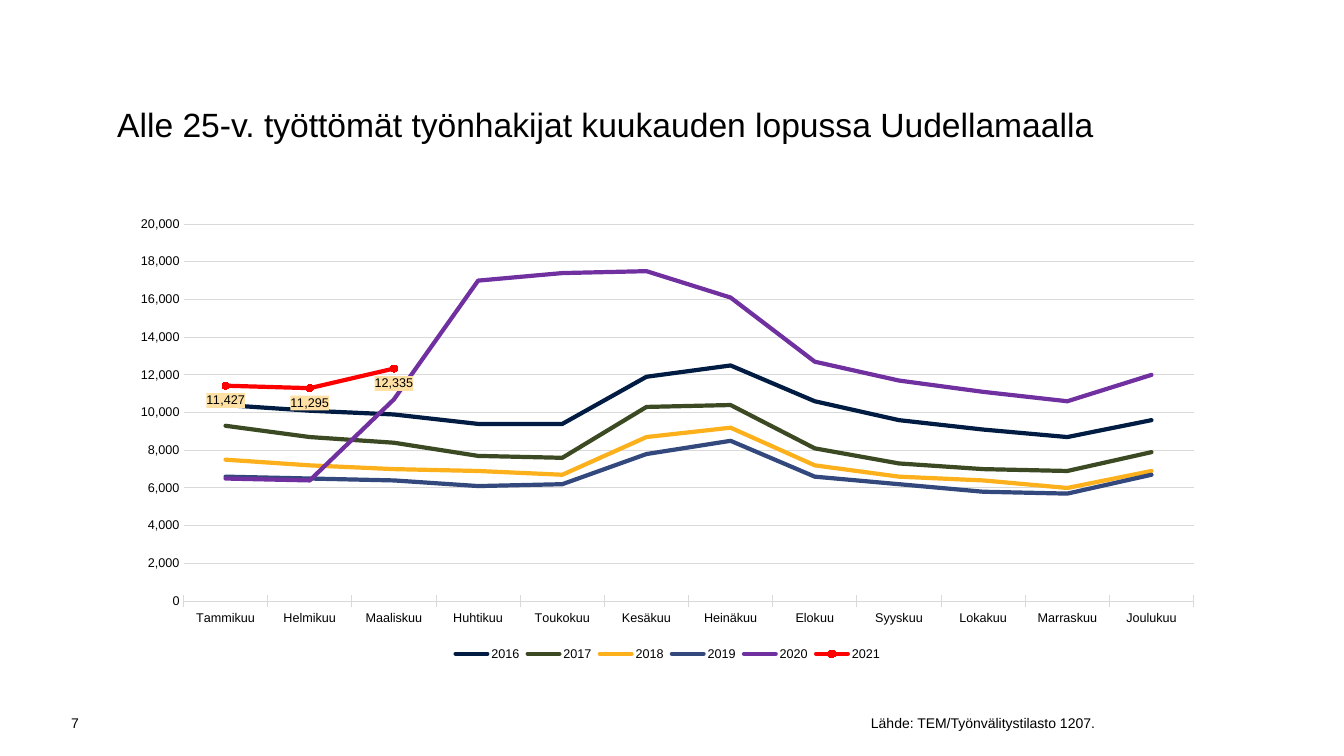
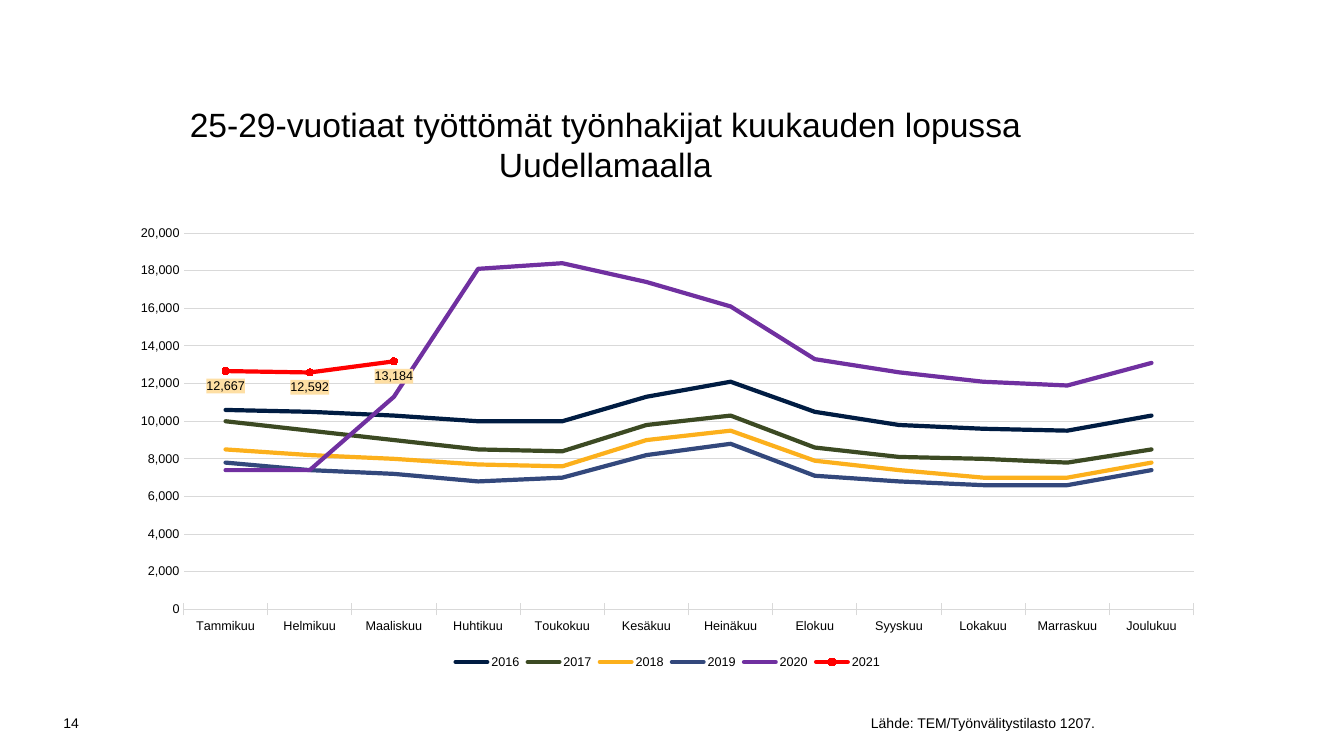
from dataclasses import dataclass
from typing import Optional

from lxml.etree import SubElement
from pptx import Presentation
from pptx.chart.axis import CategoryAxis, ValueAxis
from pptx.chart.chart import Chart
from pptx.chart.data import CategoryChartData
from pptx.chart.series import LineSeries
from pptx.dml.color import RGBColor
from pptx.dml.line import LineFormat
from pptx.enum.chart import (XL_CHART_TYPE, XL_LABEL_POSITION, XL_LEGEND_POSITION,
                             XL_MARKER_STYLE, XL_TICK_MARK)
from pptx.enum.text import MSO_ANCHOR, MSO_AUTO_SIZE, PP_ALIGN
from pptx.oxml import parse_xml
from pptx.oxml.ns import nsdecls, qn
from pptx.slide import Slide
from pptx.text.text import Font, TextFrame
from pptx.util import Pt


@dataclass(frozen=True)
class Theme:
    """Colours, typeface and type sizes of the deck."""
    font: str = "Arial"
    ink: str = "000000"
    grid: str = "D9D9D9"
    label_fill: str = "FEDFA4"
    highlight: str = "FF0000"
    title_size: float = 24
    footer_size: float = 10
    chart_size: float = 9
    grid_width: float = 0.75
    series_width: float = 3
    marker_size: int = 5


@dataclass(frozen=True)
class Box:
    """A rectangle in points."""
    left: float
    top: float
    width: float
    height: float


@dataclass(frozen=True)
class YearStyle:
    """Name and line colour of one year."""
    name: str
    color: str


@dataclass(frozen=True)
class ChartPage:
    """Content of one slide."""
    title: str
    number: str
    chart_box: Box
    values: tuple[tuple[int, ...], ...]


THEME = Theme()
TITLE_BOX = Box(74.9, 70.6, 715, 63.4)
SOURCE_BOX = Box(85.7, 501.8, 703.4, 28.8)
NUMBER_BOX = Box(21.6, 502.5, 41.8, 28.1)
SOURCE = "Lähde: TEM/Työnvälitystilasto 1207."
NUMBER_FORMAT = "#,##0"
PLOT_AREA = {"x": 0.058, "y": 0.036, "w": 0.922, "h": 0.824}
MONTHS = ("Tammikuu", "Helmikuu", "Maaliskuu", "Huhtikuu", "Toukokuu", "Kesäkuu",
          "Heinäkuu", "Elokuu", "Syyskuu", "Lokakuu", "Marraskuu", "Joulukuu")
YEARS = (
    YearStyle("2016", "001C42"),
    YearStyle("2017", "3C4A23"),
    YearStyle("2018", "FCB01C"),
    YearStyle("2019", "33487C"),
    YearStyle("2020", "7030A0"),
    YearStyle("2021", THEME.highlight),
)
PAGES = (
    ChartPage(
        "Alle 25-v. työttömät työnhakijat kuukauden lopussa Uudellamaalla", "7",
        Box(85.7, 148.3, 782.6, 326.9),
        (
            (10400, 10100, 9900, 9400, 9400, 11900, 12500, 10600, 9600, 9100, 8700, 9600),
            (9300, 8700, 8400, 7700, 7600, 10300, 10400, 8100, 7300, 7000, 6900, 7900),
            (7500, 7200, 7000, 6900, 6700, 8700, 9200, 7200, 6600, 6400, 6000, 6900),
            (6600, 6500, 6400, 6100, 6200, 7800, 8500, 6600, 6200, 5800, 5700, 6700),
            (6500, 6400, 10700, 17000, 17400, 17500, 16100, 12700, 11700, 11100, 10600, 12000),
            (11427, 11295, 12335),
        ),
    ),
    ChartPage(
        "25-29-vuotiaat työttömät työnhakijat kuukauden lopussa Uudellamaalla", "14",
        Box(85.7, 154.8, 782.6, 326.2),
        (
            (10600, 10500, 10300, 10000, 10000, 11300, 12100, 10500, 9800, 9600, 9500, 10300),
            (10000, 9500, 9000, 8500, 8400, 9800, 10300, 8600, 8100, 8000, 7800, 8500),
            (8500, 8200, 8000, 7700, 7600, 9000, 9500, 7900, 7400, 7000, 7000, 7800),
            (7800, 7400, 7200, 6800, 7000, 8200, 8800, 7100, 6800, 6600, 6600, 7400),
            (7400, 7400, 11300, 18100, 18400, 17400, 16100, 13300, 12600, 12100, 11900, 13100),
            (12667, 12592, 13184),
        ),
    ),
)


def bounds(box: Box) -> tuple[Pt, Pt, Pt, Pt]:
    """Give the box as python-pptx lengths."""
    return Pt(box.left), Pt(box.top), Pt(box.width), Pt(box.height)


def style_font(font: Font, size: float) -> None:
    """Apply the deck typeface and text colour."""
    font.name = THEME.font
    font.size = Pt(size)
    font.color.rgb = RGBColor.from_string(THEME.ink)


def style_line(line: LineFormat, color: str, width: float) -> None:
    """Make a line solid with a colour and width."""
    line.color.rgb = RGBColor.from_string(color)
    line.width = Pt(width)


def write_text(frame: TextFrame, text: str, size: float, align: PP_ALIGN,
               anchor: MSO_ANCHOR) -> None:
    """Write one formatted paragraph into a frame."""
    frame.word_wrap = True
    frame.auto_size = MSO_AUTO_SIZE.NONE
    frame.vertical_anchor = anchor
    para = frame.paragraphs[0]
    para.alignment = align
    span = para.add_run()
    span.text = text
    style_font(span.font, size)


def add_title(page: Slide, text: str) -> None:
    """Place and fill the title placeholder."""
    title = page.shapes.title
    title.left, title.top, title.width, title.height = bounds(TITLE_BOX)
    write_text(title.text_frame, text, THEME.title_size, PP_ALIGN.CENTER, MSO_ANCHOR.TOP)


def add_footer(page: Slide, box: Box, text: str) -> None:
    """Add a right-aligned footer text."""
    frame = page.shapes.add_textbox(*bounds(box)).text_frame
    write_text(frame, text, THEME.footer_size, PP_ALIGN.RIGHT, MSO_ANCHOR.MIDDLE)


def fix_plot_area(chart: Chart) -> None:
    """Set the inner plot area as fractions of the chart."""
    plot_area = chart.plots[0]._element.getparent()
    for old_layout in plot_area.findall(qn("c:layout")):
        plot_area.remove(old_layout)
    layout = parse_xml(f"<c:layout {nsdecls('c')}><c:manualLayout/></c:layout>")
    settings = {"layoutTarget": "inner", "xMode": "edge", "yMode": "edge", **PLOT_AREA}
    for name, value in settings.items():
        SubElement(layout[0], qn(f"c:{name}")).set("val", str(value))
    plot_area.insert(0, layout)


def style_category_axis(axis: CategoryAxis) -> None:
    """Format the month axis."""
    axis.major_tick_mark = XL_TICK_MARK.CROSS
    axis.minor_tick_mark = XL_TICK_MARK.NONE
    style_line(axis.format.line, THEME.grid, THEME.grid_width)
    style_font(axis.tick_labels.font, THEME.chart_size)


def style_value_axis(axis: ValueAxis) -> None:
    """Format the value axis and its gridlines."""
    axis.minimum_scale, axis.maximum_scale, axis.major_unit = 0, 20000, 2000
    axis.major_tick_mark = axis.minor_tick_mark = XL_TICK_MARK.NONE
    axis.format.line.fill.background()
    style_line(axis.major_gridlines.format.line, THEME.grid, THEME.grid_width)
    style_font(axis.tick_labels.font, THEME.chart_size)
    axis.tick_labels.number_format = NUMBER_FORMAT
    axis.tick_labels.number_format_is_linked = False


def highlight_series(series: LineSeries) -> None:
    """Give a series round markers and tinted value labels."""
    marker = series.marker
    marker.style = XL_MARKER_STYLE.CIRCLE
    marker.size = THEME.marker_size
    color = RGBColor.from_string(THEME.highlight)
    marker.format.fill.solid()
    marker.format.fill.fore_color.rgb = color
    marker.format.line.color.rgb = color
    labels = series.data_labels
    labels.show_value = True
    labels.position = XL_LABEL_POSITION.BELOW
    labels.number_format = NUMBER_FORMAT
    labels.number_format_is_linked = False
    style_font(labels.font, THEME.chart_size)
    fill = parse_xml(
        f"<c:spPr {nsdecls('c', 'a')}><a:solidFill>"
        f"<a:srgbClr val='{THEME.label_fill}'/></a:solidFill></c:spPr>")
    labels._element.find(qn("c:txPr")).addprevious(fill)


def style_series(series: LineSeries, year: YearStyle) -> None:
    """Format one year's line."""
    series.smooth = False
    style_line(series.format.line, year.color, THEME.series_width)
    series._element.find(".//" + qn("a:ln")).set("cap", "rnd")
    if year.color == THEME.highlight:
        highlight_series(series)
    else:
        series.marker.style = XL_MARKER_STYLE.NONE


def add_line_chart(page: Slide, content: ChartPage) -> None:
    """Add the monthly line chart with one line per year."""
    data = CategoryChartData(number_format=NUMBER_FORMAT)
    data.categories = MONTHS
    for year, known in zip(YEARS, content.values):
        missing: tuple[Optional[int], ...] = (None,) * (len(MONTHS) - len(known))
        data.add_series(year.name, known + missing)
    chart = page.shapes.add_chart(
        XL_CHART_TYPE.LINE, *bounds(content.chart_box), data).chart
    style_font(chart.font, THEME.footer_size)
    chart.has_title = False
    chart.has_legend = True
    chart.legend.position = XL_LEGEND_POSITION.BOTTOM
    chart.legend.include_in_layout = False
    style_font(chart.legend.font, THEME.chart_size)
    chart.plots[0].vary_by_categories = False
    fix_plot_area(chart)
    style_category_axis(chart.category_axis)
    style_value_axis(chart.value_axis)
    for series, year in zip(chart.plots[0].series, YEARS):
        style_series(series, year)


def main() -> None:
    """Build and save the deck."""
    deck = Presentation()
    deck.slide_width, deck.slide_height = Pt(960), Pt(540)
    title_only = deck.slide_layouts.get_by_name("Title Only")
    for content in PAGES:
        page = deck.slides.add_slide(title_only)
        add_footer(page, SOURCE_BOX, SOURCE)
        add_footer(page, NUMBER_BOX, content.number)
        add_title(page, content.title)
        add_line_chart(page, content)
    deck.save("out.pptx")


if __name__ == "__main__":
    main()
